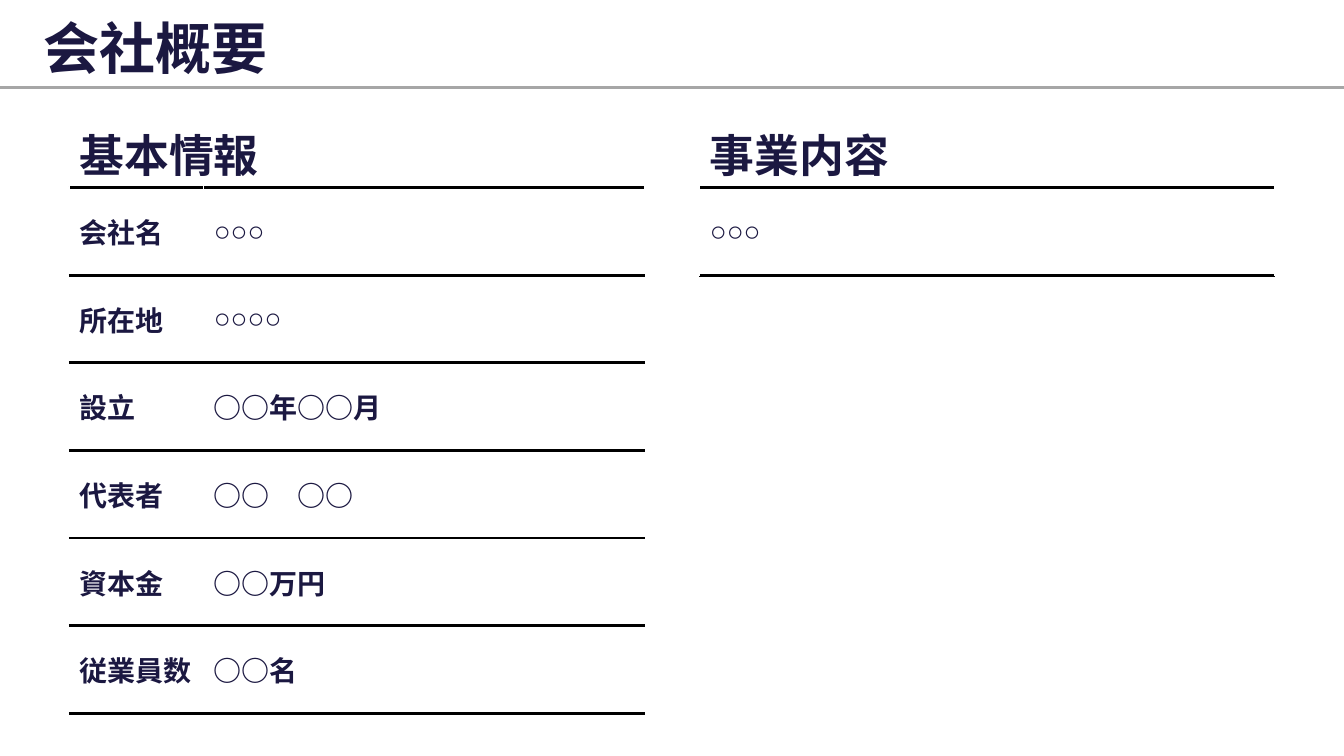
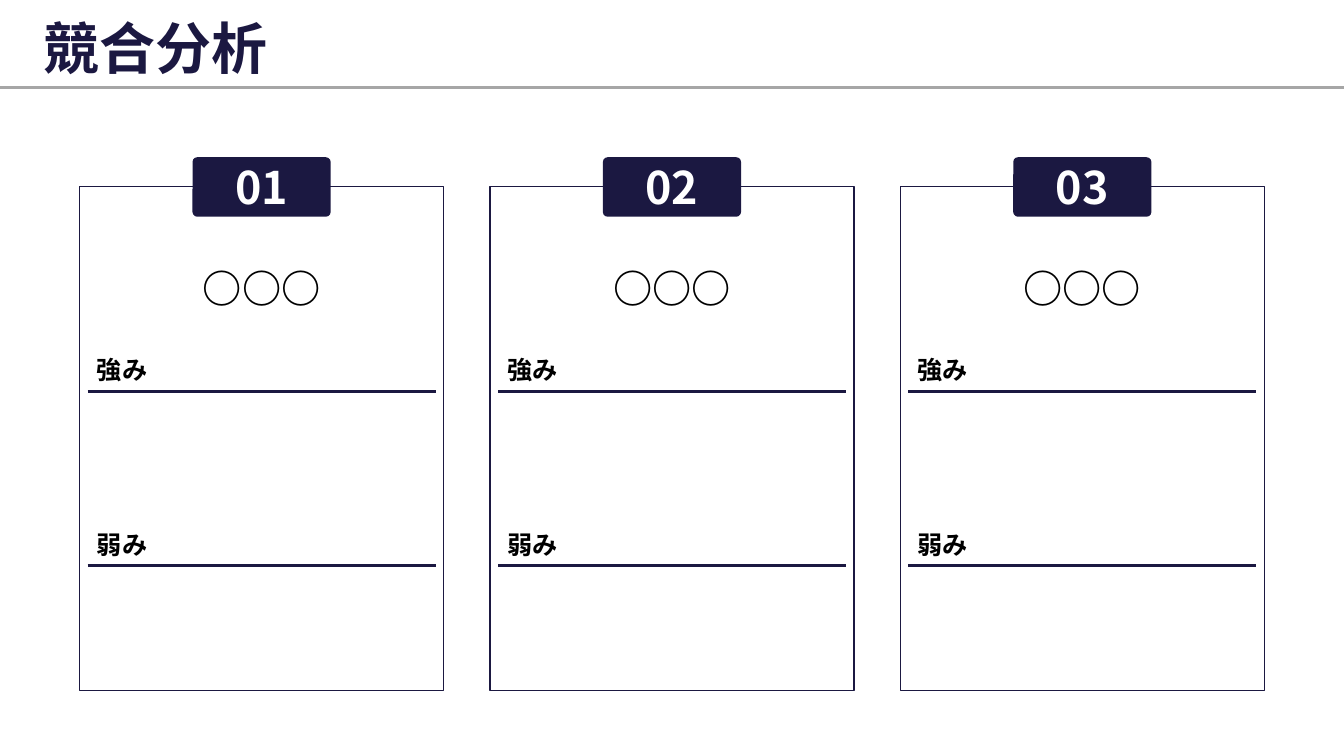
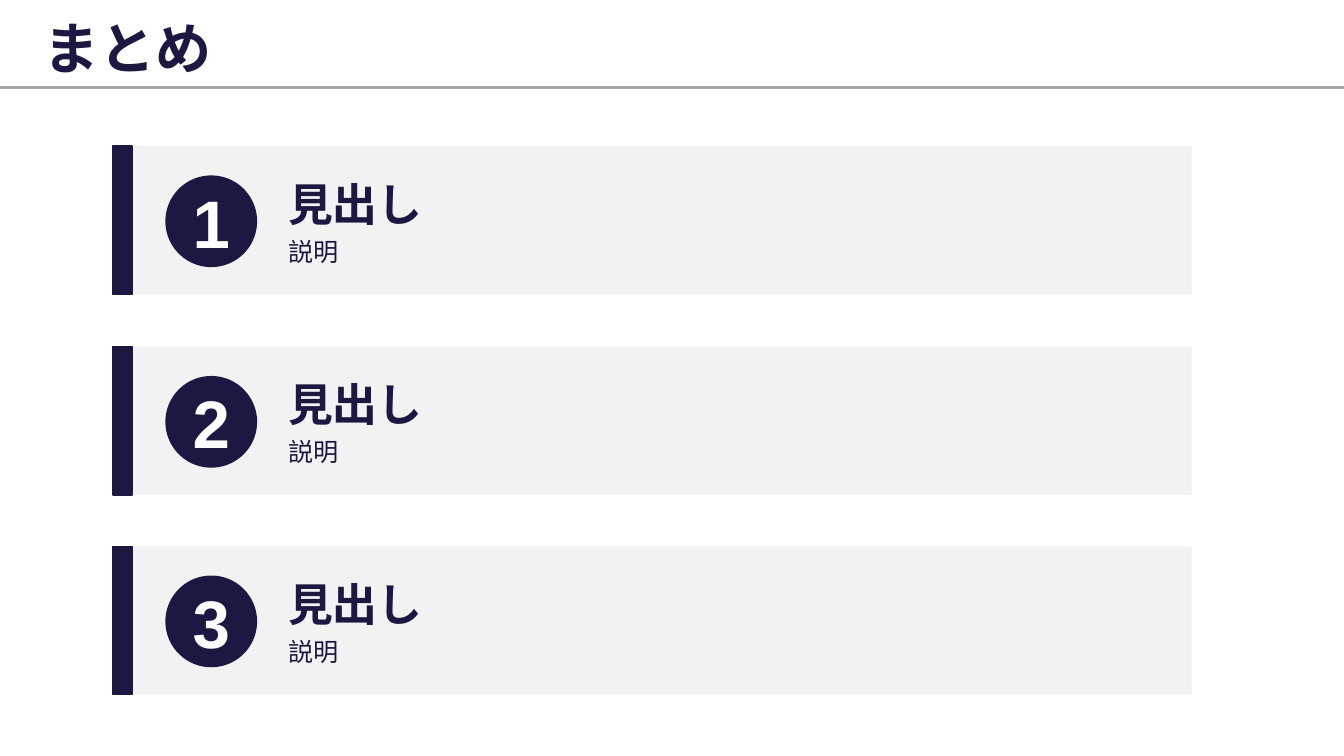
from lxml.etree import SubElement
from pptx import Presentation
from pptx.dml.color import RGBColor
from pptx.enum.shapes import MSO_CONNECTOR, MSO_SHAPE
from pptx.enum.text import MSO_ANCHOR, MSO_AUTO_SIZE, PP_ALIGN
from pptx.oxml.ns import qn
from pptx.util import Inches, Pt

NAVY = RGBColor(0x1B, 0x18, 0x41)
GRAY = RGBColor(0xA6, 0xA6, 0xA6)
PALE = RGBColor(0xF2, 0xF2, 0xF2)
BLACK = RGBColor(0, 0, 0)
WHITE = RGBColor(0xFF, 0xFF, 0xFF)

LATIN = "Arial"
JAPANESE = "Noto Sans CJK JP"

TITLE = {"size": Pt(40), "name": LATIN}
HEADING = {"size": Pt(32), "name": LATIN}
CELL = {"size": Pt(20), "name": LATIN}
BADGE = {"size": Pt(32), "color": WHITE}
RIVAL = {"size": Pt(28), "color": BLACK}
LABEL = {"size": Pt(18), "color": BLACK}
NUMBER = {"size": Pt(48), "name": LATIN, "color": WHITE}
POINT = {"size": Pt(32)}
DETAIL = {"size": Pt(18), "bold": False}


class Deck:
    def __init__(self, width, height):
        self.show = Presentation()
        self.show.slide_width = Inches(width)
        self.show.slide_height = Inches(height)
        self.width = width
        self.slide = None

    def new_slide(self, heading):
        self.slide = self.show.slides.add_slide(self.show.slide_layouts[5])
        self.line(0, 0.87, self.width, GRAY)
        title = self.slide.shapes.title
        place = {"left": 0.33, "top": 0.15, "width": 11.5, "height": 0.72}
        for side, length in place.items():
            setattr(title, side, Inches(length))
        self.frame(title, MSO_ANCHOR.MIDDLE)
        self.put_words(title.text_frame.paragraphs[0], heading, TITLE,
                       spacing=0.9)

    def frame(self, box, anchor):
        settings = {"word_wrap": True, "auto_size": MSO_AUTO_SIZE.NONE,
                    "vertical_anchor": anchor}
        for key, value in settings.items():
            setattr(box.text_frame, key, value)

    def put_words(self, paragraph, words, style, align=PP_ALIGN.LEFT,
                  spacing=1.0):
        layout = {"alignment": align, "line_spacing": spacing,
                  "space_before": Pt(0)}
        for key, value in layout.items():
            setattr(paragraph, key, value)
        run = paragraph.add_run()
        run.text = words
        look = {"name": JAPANESE, "bold": True, "color": NAVY, **style}
        run.font.color.rgb = look.pop("color")
        for key, value in look.items():
            setattr(run.font, key, value)
        SubElement(run.font._element, qn("a:ea"), typeface=JAPANESE)

    def text(self, area, lines, align=PP_ALIGN.LEFT, anchor=MSO_ANCHOR.TOP):
        box = self.slide.shapes.add_textbox(*map(Inches, area))
        self.frame(box, anchor)
        for index, (words, style, spacing) in enumerate(lines):
            body = box.text_frame
            paragraph = body.add_paragraph() if index else body.paragraphs[0]
            self.put_words(paragraph, words, style, align, spacing)

    def shape(self, preset, area, fill, outline=None, words=None, style=None):
        shape = self.slide.shapes.add_shape(preset, *map(Inches, area))
        shape.shadow.inherit = False
        shape.fill.solid()
        shape.fill.fore_color.rgb = fill
        if outline is None:
            shape.line.fill.background()
        else:
            shape.line.color.rgb = outline
            shape.line.width = Pt(1)
        if words:
            self.frame(shape, MSO_ANCHOR.MIDDLE)
            self.put_words(shape.text_frame.paragraphs[0], words, style,
                           PP_ALIGN.CENTER)
        return shape

    def line(self, left, top, length, color):
        rule = self.slide.shapes.add_connector(
            MSO_CONNECTOR.STRAIGHT, Inches(left), Inches(top),
            Inches(left + length), Inches(top))
        rule.line.color.rgb = color
        rule.line.width = Pt(2.25)
        SubElement(rule._element.spPr, qn("a:effectLst"))

    def border(self, cell):
        sides = {"a:lnL": (WHITE, 1), "a:lnR": (WHITE, 1),
                 "a:lnT": (BLACK, 2.25), "a:lnB": (BLACK, 2.25)}
        properties = cell._tc.get_or_add_tcPr()
        for tag, (color, weight) in sides.items():
            edge = SubElement(properties, qn(tag), w=str(Pt(weight)))
            fill = SubElement(edge, qn("a:solidFill"))
            SubElement(fill, qn("a:srgbClr"), val=str(color))

    def table(self, left, top, widths, row_height, rows):
        area = (left, top, sum(widths), row_height * len(rows))
        grid = self.slide.shapes.add_table(
            len(rows), len(widths), *map(Inches, area)).table
        grid.first_row = grid.horz_banding = False
        for column, width in zip(grid.columns, widths):
            column.width = Inches(width)
        for r, row in enumerate(rows):
            for c, words in enumerate(row):
                cell = grid.cell(r, c)
                self.border(cell)
                cell.fill.solid()
                cell.fill.fore_color.rgb = WHITE
                cell.vertical_anchor = MSO_ANCHOR.MIDDLE
                is_label = c < len(row) - 1
                self.put_words(cell.text_frame.paragraphs[0], words, CELL,
                               PP_ALIGN.JUSTIFY if is_label else PP_ALIGN.LEFT)


def company_profile(deck):
    deck.new_slide("会社概要")
    facts = [("会社名", "○○○"), ("所在地", "○○○○"), ("設立", "○○年○○月"),
             ("代表者", "○○　○○"), ("資本金", "○○万円"), ("従業員数", "○○名")]
    sections = [(0.69, "基本情報", (1.33, 4.37), facts),
                (6.94, "事業内容", (5.7,), [("○○○",)])]
    for left, heading, widths, rows in sections:
        deck.table(left, 1.86, widths, 0.87, rows)
        deck.text((left, 1.27, 5.97, 0.6), [(heading, HEADING, 0.9)],
                  anchor=MSO_ANCHOR.MIDDLE)


def competitor_analysis(deck):
    deck.new_slide("競合分析")
    for index, number in enumerate(("01", "02", "03")):
        left = 0.79 + 4.07 * index
        deck.shape(MSO_SHAPE.RECTANGLE, (left, 1.85, 3.61, 5), WHITE, NAVY)
        badge = deck.shape(MSO_SHAPE.ROUNDED_RECTANGLE,
                           (left + 1.12, 1.56, 1.37, 0.59), NAVY,
                           words=number, style=BADGE)
        badge.adjustments[0] = 0.08
        deck.text((left + 0.31, 2.57, 2.99, 0.57), [("○○○", RIVAL, 1.0)],
                  PP_ALIGN.CENTER)
        for label, top in (("強み", 3.47), ("弱み", 5.2)):
            deck.text((left - 0.14, top, 1.12, 0.4), [(label, LABEL, 1.0)],
                      PP_ALIGN.CENTER)
            deck.line(left + 0.08, top + 0.41, 3.45, NAVY)


def summary(deck):
    deck.new_slide("まとめ")
    for index, top in enumerate((1.45, 3.44, 5.42)):
        deck.shape(MSO_SHAPE.RECTANGLE, (1.12, top, 10.7, 1.47), PALE)
        deck.shape(MSO_SHAPE.RECTANGLE, (1.12, top, 0.19, 1.47), NAVY, NAVY)
        deck.shape(MSO_SHAPE.OVAL, (1.64, top + 0.29, 0.91, 0.91), NAVY,
                   words=str(index + 1), style=NUMBER)
        deck.text((2.76, top + 0.25, 8.37, 0.98),
                  [("見出し", POINT, 1.0), ("説明", DETAIL, 1.2)])


def main():
    deck = Deck(13.33, 7.5)
    company_profile(deck)
    competitor_analysis(deck)
    summary(deck)
    deck.show.save("out.pptx")


if __name__ == "__main__":
    main()
